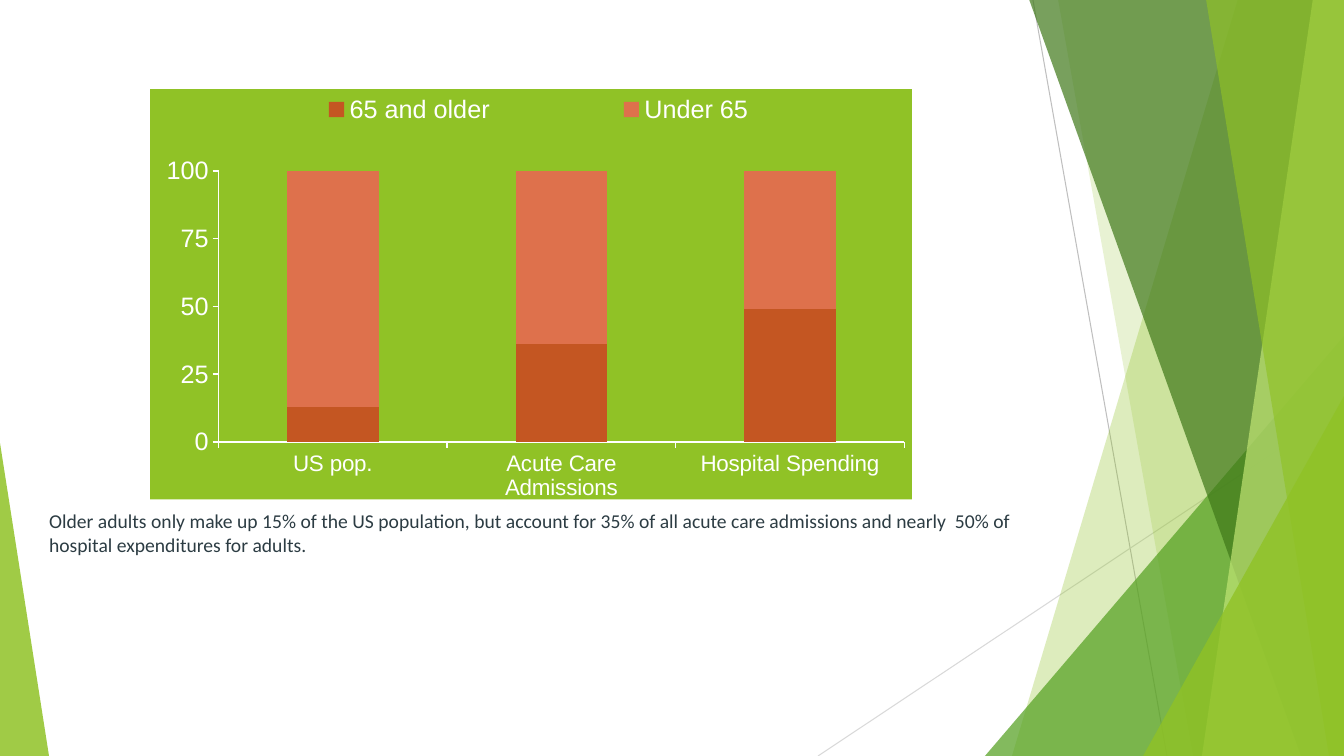
from lxml import etree
from pptx import Presentation
from pptx import util as u
from pptx.chart import data
from pptx.dml.color import RGBColor
from pptx.enum import chart as ch, shapes, text
from pptx.oxml import parse_xml
from pptx.oxml.ns import nsdecls, qn

HUE = {
    "lime": "90C226", "leaf": "54A021", "moss": "3F7819", "pale": "C0E474",
    "gray": "BFBFBF", "mist": "D9D9D9", "ink": "2C3C43", "white": "FFFFFF",
    "black": "000000", "rust": "C45622", "coral": "DE714C",
}
SCALE = 914400 / 100.8
WIDE, HIGH = 1344, 756


def px(n):
    return u.Emu(round(n * SCALE))


def rgb(name):
    return RGBColor.from_string(HUE[name])


def style(font, size, name, hue):
    font.size = u.Pt(size)
    font.name = name
    font.color.rgb = rgb(hue)


def paint(shape, hue, alpha):
    """Fill a shape with a see-through colour and no outline."""
    shape.shadow.inherit = False
    shape.fill.solid()
    shape.fill.fore_color.rgb = rgb(hue)
    shape.line.fill.background()
    tint = next(shape.fill._xPr.iter(qn("a:srgbClr")))
    etree.SubElement(tint, qn("a:alpha")).set("val", str(alpha * 1000))


def write(frame, words, size=14, name="Calibri", hue="ink"):
    """Put one unbulleted paragraph in a text frame."""
    frame.word_wrap = True
    frame.auto_size = text.MSO_AUTO_SIZE.NONE
    frame.vertical_anchor = text.MSO_ANCHOR.TOP
    para = frame.paragraphs[0]
    props = para._p.get_or_add_pPr()
    props.set("marL", "0")
    props.set("indent", "0")
    etree.SubElement(props, qn("a:buNone"))
    para.space_before = u.Pt(0)
    run = para.add_run()
    run.text = words
    style(run.font, size, name, hue)


# Background facets
def facets(slide, box):
    left, top, width, height = box
    right, base = left + width, top + height

    def thread(x1, y1, x2, y2, hue):
        line = slide.shapes.add_connector(
            shapes.MSO_CONNECTOR.STRAIGHT,
            px(left + x1), px(top + y1), px(left + x2), px(top + y2))
        line.line.color.rgb = rgb(hue)
        line.line.width = u.Pt(0.75)
        etree.SubElement(line._element.spPr, qn("a:effectLst"))

    def slab(high, low, hue, alpha):
        """Fill from a slanted left edge to the right side of the box."""
        form = slide.shapes.build_freeform(px(left + high), px(top - 1))
        form.add_line_segments([
            (px(right), px(top - 1)), (px(right), px(base)),
            (px(left + low), px(base))], close=True)
        paint(form.convert_to_shape(), hue, alpha)

    def wedge(x, wide, tall, tip, hue, alpha):
        """Stand a right triangle on the bottom of the box."""
        shape = slide.shapes.add_shape(
            shapes.MSO_SHAPE.ISOSCELES_TRIANGLE,
            px(left + x), px(base - tall), px(wide), px(tall))
        shape.adjustments[0] = tip
        paint(shape, hue, alpha)

    thread(1033, 0, 1167, height, "gray")
    thread(width, 406, 818, height, "mist")
    slab(1238, 1012, "lime", 30)
    slab(1058, 1193, "lime", 20)
    wedge(985, 359, 420, 1, "leaf", 72)
    slab(1029, 1301, "moss", 70)
    slab(1313, 1202, "pale", 70)
    slab(1206, 1329, "lime", 65)
    wedge(1143, 201, 360, 1, "lime", 80)
    wedge(0, 49, 313, 0, "lime", 85)


def layout(x, y, w, h, inner=False):
    """Make a fixed layout from fractions of the chart."""
    target = '<c:layoutTarget val="inner"/>' if inner else ""
    sizes = "".join(f'<c:{tag} val="{val}"/>'
                    for tag, val in zip("xywh", (x, y, w, h)))
    return parse_xml(
        f'<c:layout {nsdecls("c")}><c:manualLayout>{target}'
        f'<c:xMode val="edge"/><c:yMode val="edge"/>{sizes}'
        '</c:manualLayout></c:layout>')


# Stacked column chart
def columns(slide, box):
    table = data.CategoryChartData()
    table.categories = ["US pop.", "Acute Care Admissions", "Hospital Spending"]
    table.add_series("65 and older", (13, 36, 49))
    table.add_series("Under 65", (87, 64, 51))
    chart = slide.shapes.add_chart(
        ch.XL_CHART_TYPE.COLUMN_STACKED, *map(px, box), table).chart
    chart.has_title = False
    style(chart.font, 10, "Roboto", "black")

    # Bars
    plot = chart.plots[0]
    plot.gap_width, plot.overlap = 150, 100
    plot.vary_by_categories = False
    for bars, hue in zip(plot.series, ("rust", "coral")):
        bars.format.fill.solid()
        bars.format.fill.fore_color.rgb = rgb(hue)

    # Axes
    cats, vals = chart.category_axis, chart.value_axis
    for axis, size in ((cats, 16), (vals, 18)):
        axis.has_major_gridlines = False
        axis.major_tick_mark = ch.XL_TICK_MARK.OUTSIDE
        axis.minor_tick_mark = ch.XL_TICK_MARK.NONE
        axis.format.line.color.rgb = rgb("white")
        axis.format.line.width = u.Pt(1)
        style(axis.tick_labels.font, size, "Arial", "white")
    cats.tick_label_position = ch.XL_TICK_LABEL_POSITION.LOW
    vals.minimum_scale, vals.maximum_scale, vals.major_unit = 0, 100, 25
    vals.tick_labels.number_format = "0"
    vals.tick_labels.number_format_is_linked = False

    # Legend
    chart.has_legend = True
    key = chart.legend
    key.position = ch.XL_LEGEND_POSITION.TOP
    key.include_in_layout = True
    style(key.font, 18, "Arial", "white")

    # Fixed places and green ground
    root = chart._chartSpace
    area = root.find(".//" + qn("c:plotArea"))
    spot = root.find(".//" + qn("c:legendPos"))
    for owner in (area, spot.getparent()):
        for old in owner.findall(qn("c:layout")):
            owner.remove(old)
    area.insert(0, layout(0.09, 0.2, 0.9, 0.66, inner=True))
    spot.addnext(layout(0.07, 0.01, 0.88, 0.08))
    root.find(qn("c:chart")).addnext(parse_xml(
        f'<c:spPr {nsdecls("c", "a")}><a:solidFill>'
        f'<a:srgbClr val="{HUE["lime"]}"/></a:solidFill>'
        '<a:ln><a:noFill/></a:ln></c:spPr>'))


# Caption under the chart
def caption(slide, box):
    body = slide.placeholders[1]
    body.left, body.top, body.width, body.height = map(px, box)
    write(body.text_frame,
          "Older adults only make up 15% of the US population, but account "
          "for 35% of all acute care admissions and nearly  50% of hospital "
          "expenditures for adults.")


def main():
    deck = Presentation()
    deck.slide_width, deck.slide_height = px(WIDE), px(HIGH)
    slide = deck.slides.add_slide(deck.slide_layouts[1])
    title = slide.shapes.title._element
    title.getparent().remove(title)
    facets(slide, (0, 0, WIDE, HIGH))
    caption(slide, (39, 504, 983, 196))
    columns(slide, (150, 89, 762, 411))
    deck.save("out.pptx")


if __name__ == "__main__":
    main()
